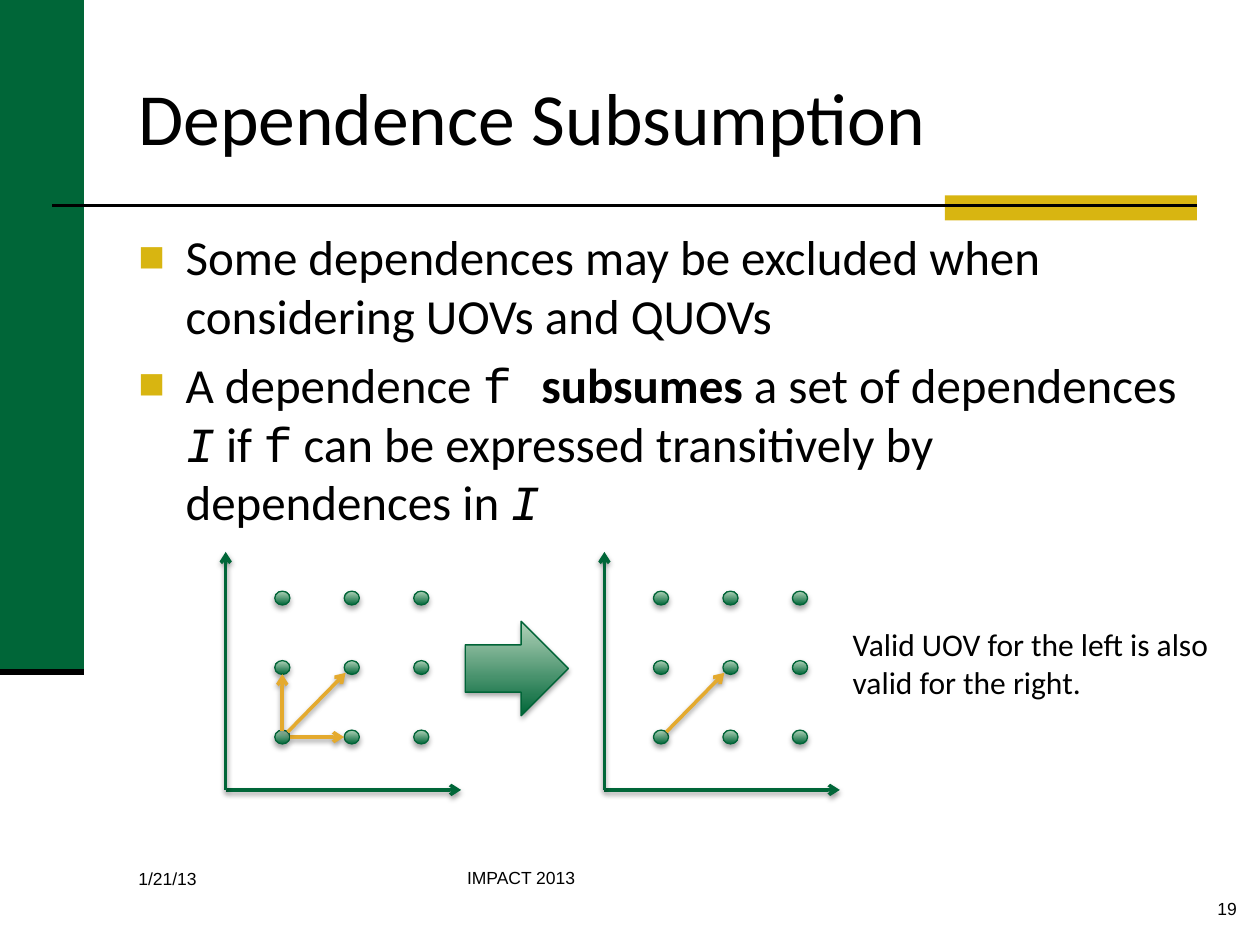
from dataclasses import dataclass
from itertools import product

from lxml import etree
from pptx import Presentation
from pptx import util as u
from pptx.dml.color import RGBColor
from pptx.enum import shapes, text
from pptx.oxml.ns import qn

COLOURS = {
    "green": "006638",
    "outline": "006437",
    "pale": "B1D2B9",
    "gold": "D8B511",
    "amber": "E4AA2E",
    "black": "000000",
}
BODY_FONT, CODE_FONT, FOOTER_FONT = "Calibri", "Courier New", "Arial"
DOT_WIDTH, DOT_HEIGHT, DOT_PITCH = 8.64, 7.92, 39.7
DOT_LEFT, DOT_TOP = 157, 337.8
GRAPH_SHIFT = 216.4


@dataclass
class Frame:
    left: float
    top: float
    width: float
    height: float

    def lengths(self) -> list:
        return [u.Pt(n) for n in (self.left, self.top, self.width, self.height)]


@dataclass
class Line:
    start: tuple
    end: tuple
    colour: str
    weight: float = 2
    arrow: bool = True


@dataclass
class Span:
    words: str
    font: str = BODY_FONT
    bold: bool = False
    italic: bool = False


def rgb(name: str) -> RGBColor:
    return RGBColor.from_string(COLOURS[name])


def add_child(parent, tag: str, **attributes):
    return etree.SubElement(parent, qn(tag), attributes)


def set_shadow(properties, alpha: int = 0, distance: float = 0) -> None:
    """Write the effect list; an alpha of zero leaves it empty."""
    effects = add_child(properties, "a:effectLst")
    if alpha:
        shadow = add_child(effects, "a:outerShdw", blurRad=str(u.Pt(3.1)),
                           dist=str(u.Pt(distance)), dir="5400000", rotWithShape="0")
        colour = add_child(shadow, "a:srgbClr", val=COLOURS["black"])
        add_child(colour, "a:alpha", val=str(alpha * 1000))


def add_block(page, frame: Frame, colour: str) -> None:
    block = page.shapes.add_shape(shapes.MSO_SHAPE.RECTANGLE, *frame.lengths())
    block.shadow.inherit = False
    block.fill.solid()
    block.fill.fore_color.rgb = rgb(colour)
    block.line.fill.background()


def add_glossy(page, kind, frame: Frame) -> None:
    """Add a shape shaded from green at the foot to pale at the top."""
    shape = page.shapes.add_shape(kind, *frame.lengths())
    shape.fill.gradient()
    shape.fill.gradient_angle = 90
    for stop, colour in zip(shape.fill.gradient_stops, ("green", "pale")):
        stop.color.rgb = rgb(colour)
    shape.line.color.rgb = rgb("outline")
    shape.line.width = u.Pt(0.75)
    set_shadow(shape._element.spPr, 35, 1.8)


def add_line(page, line: Line, shift: float = 0) -> None:
    (x1, y1), (x2, y2) = line.start, line.end
    connector = page.shapes.add_connector(
        shapes.MSO_CONNECTOR.STRAIGHT,
        u.Pt(x1 + shift), u.Pt(y1), u.Pt(x2 + shift), u.Pt(y2))
    connector.line.color.rgb = rgb(line.colour)
    connector.line.width = u.Pt(line.weight)
    properties = connector._element.spPr
    if line.arrow:
        add_child(properties.find(qn("a:ln")), "a:tailEnd", type="arrow")
        set_shadow(properties, 38, 1.6)
    else:
        set_shadow(properties)


def add_bullet(para) -> None:
    properties = para._p.get_or_add_pPr()
    properties.set("marL", str(u.Pt(27)))
    properties.set("indent", str(u.Pt(-27)))
    add_child(add_child(properties, "a:buClr"), "a:srgbClr", val=COLOURS["gold"])
    add_child(properties, "a:buSzPct", val="90000")
    add_child(properties, "a:buFont", typeface=FOOTER_FONT)
    add_child(properties, "a:buChar", char="■")


def add_text(page, frame: Frame, paragraphs: list, size: float, bullets: bool = False,
             align=text.PP_ALIGN.LEFT, anchor=text.MSO_ANCHOR.TOP) -> None:
    box = page.shapes.add_textbox(*frame.lengths())
    box.text_frame.word_wrap = True
    box.text_frame.vertical_anchor = anchor
    for index, spans in enumerate(paragraphs):
        para = box.text_frame.add_paragraph() if index else box.text_frame.paragraphs[0]
        if bullets:
            add_bullet(para)
        if index:
            para.space_before = u.Pt(0.2 * size)
        para.alignment = align
        for span in spans:
            run = para.add_run()
            run.text = span.words
            run.font.name = span.font
            run.font.size = u.Pt(size)
            run.font.bold = span.bold
            run.font.italic = span.italic
            run.font.color.rgb = rgb("black")


def add_graph(page, dependences: list, shift: float = 0) -> None:
    """Draw a three by three iteration space with axes and dependence arrows."""
    for column, row in product(range(3), repeat=2):
        add_glossy(page, shapes.MSO_SHAPE.OVAL, Frame(
            DOT_LEFT + shift + column * DOT_PITCH, DOT_TOP + row * DOT_PITCH,
            DOT_WIDTH, DOT_HEIGHT))
    origin = (129, 451.4)
    axes = [Line(origin, end, "green") for end in ((263.5, 451.4), (129, 315.4))]
    for line in axes + dependences:
        add_line(page, line, shift)


def main() -> None:
    deck = Presentation()
    deck.slide_width, deck.slide_height = u.Pt(720), u.Pt(540)
    page = deck.slides.add_slide(deck.slide_layouts[6])

    add_block(page, Frame(0, 0, 48, 384), "green")
    add_block(page, Frame(540, 111.6, 144, 14.4), "gold")
    add_line(page, Line((30, 117.6), (684, 117.6), "black", 1.5, False))
    add_line(page, Line((0, 384), (48, 384), "black", 3.5, False))

    add_text(page, Frame(72, 21.6, 612, 90), [[Span("Dependence Subsumption")]], 42,
             anchor=text.MSO_ANCHOR.MIDDLE)
    add_text(page, Frame(72, 126, 612, 356.4), [
        [Span("Some dependences may be excluded when considering UOVs and QUOVs")],
        [Span("A dependence "), Span("f ", CODE_FONT), Span("subsumes ", bold=True),
         Span("a set of dependences "), Span("I", CODE_FONT, italic=True),
         Span(" if "), Span("f", CODE_FONT),
         Span(" can be expressed transitively by dependences in "),
         Span("I", CODE_FONT, italic=True)],
    ], 28, bullets=True)

    footers = [
        ("1/21/13", Frame(72, 492.5, 156, 36), text.PP_ALIGN.LEFT),
        ("IMPACT 2013", Frame(180.7, 491.8, 234, 36), text.PP_ALIGN.CENTER),
        ("19", Frame(563.8, 509.8, 150, 18), text.PP_ALIGN.RIGHT),
    ]
    for words, frame, align in footers:
        add_text(page, frame, [[Span(words, FOOTER_FONT)]], 10, align=align)

    right = Line((165.6, 421.2), (196.6, 421.2), "amber")
    up = Line((161.3, 417.6), (161.3, 385.2), "amber")
    diagonal = Line((164.4, 418.3), (197.5, 384.5), "amber")
    add_graph(page, [right, up, diagonal])
    add_graph(page, [diagonal], GRAPH_SHIFT)
    add_glossy(page, shapes.MSO_SHAPE.RIGHT_ARROW, Frame(265.8, 355, 59, 54))
    add_text(page, Frame(480.2, 353.5, 219.6, 51),
             [[Span("Valid UOV for the left is also valid for the right.")]], 18)

    deck.save("out.pptx")


if __name__ == "__main__":
    main()
